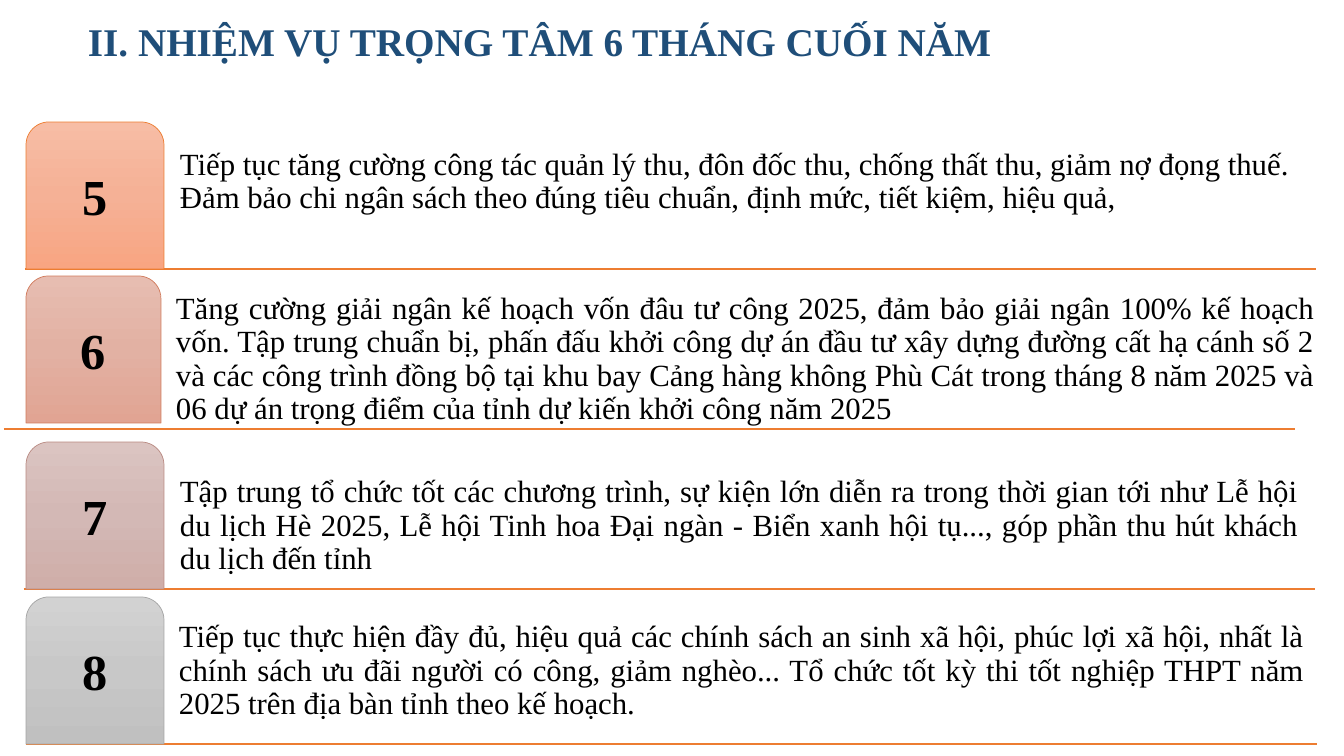
"""Build the slide of key tasks 5 to 8 for the last six months of the year."""
from copy import deepcopy

from pptx import Presentation
from pptx.dml.color import RGBColor
from pptx.enum.shapes import MSO_CONNECTOR, MSO_SHAPE
from pptx.enum.text import MSO_ANCHOR, MSO_AUTO_SIZE, PP_ALIGN
from pptx.oxml.ns import qn
from pptx.util import Pt

TITLE = "II. NHIỆM VỤ TRỌNG TÂM 6 THÁNG CUỐI NĂM"
NAVY = RGBColor(0x1F, 0x4E, 0x79)
BLACK = RGBColor(0x00, 0x00, 0x00)
ORANGE = RGBColor(0xED, 0x7D, 0x31)

TASKS = [
    {
        "number": "5",
        "wording": "Tiếp tục tăng cường công tác quản lý thu, đôn đốc thu, chống thất thu, "
                   "giảm nợ đọng thuế. Đảm bảo chi ngân sách theo đúng tiêu chuẩn, định mức, "
                   "tiết kiệm, hiệu quả,",
        "align": PP_ALIGN.LEFT,
        "wording_box": (175, 143, 1160, 77),
        "tab_top": 122, "tab_width": 138, "rule_start": (25, 269),
        "shades": (RGBColor(0xF7, 0xBD, 0xA5), RGBColor(0xF5, 0xB1, 0x96),
                   RGBColor(0xF8, 0xA5, 0x82)),
        "edge": ORANGE,
    },
    {
        "number": "6",
        "wording": "Tăng cường giải ngân kế hoạch vốn đâu tư công 2025, đảm bảo giải ngân 100% "
                   "kế hoạch vốn. Tập trung chuẩn bị, phấn đấu khởi công dự án đầu tư xây dựng "
                   "đường cất hạ cánh số 2 và các công trình đồng bộ tại khu bay Cảng hàng không "
                   "Phù Cát trong tháng 8 năm 2025 và 06 dự án trọng điểm của tỉnh dự kiến khởi "
                   "công năm 2025",
        "align": PP_ALIGN.JUSTIFY,
        "wording_box": (171, 274, 1148, 157),
        "tab_top": 276, "tab_width": 135, "rule_start": (4, 429),
        "shades": (RGBColor(0xE7, 0xBD, 0xB1), RGBColor(0xE2, 0xB1, 0xA3),
                   RGBColor(0xE1, 0xA4, 0x93)),
        "edge": RGBColor(0xD1, 0x7B, 0x5C),
    },
    {
        "number": "7",
        "wording": "Tập trung tổ chức tốt các chương trình, sự kiện lớn diễn ra trong thời gian "
                   "tới như Lễ hội du lịch Hè 2025, Lễ hội Tinh hoa Đại ngàn - Biển xanh hội "
                   "tụ..., góp phần thu hút khách du lịch đến tỉnh",
        "align": PP_ALIGN.JUSTIFY,
        "wording_box": (175, 459, 1128, 122),
        "tab_top": 442, "tab_width": 138, "rule_start": (24, 589),
        "shades": (RGBColor(0xDB, 0xC4, 0xC1), RGBColor(0xD3, 0xB8, 0xB5),
                   RGBColor(0xCF, 0xAE, 0xA9)),
        "edge": RGBColor(0xB9, 0x8A, 0x82),
    },
    {
        "number": "8",
        "wording": "Tiếp tục thực hiện đầy đủ, hiệu quả các chính sách an sinh xã hội, phúc lợi "
                   "xã hội, nhất là chính sách ưu đãi người có công, giảm nghèo... Tổ chức tốt "
                   "kỳ thi tốt nghiệp THPT năm 2025 trên địa bàn tỉnh theo kế hoạch.",
        "align": PP_ALIGN.JUSTIFY,
        "wording_box": (174, 579, 1135, 147),
        "tab_top": 597, "tab_width": 138, "rule_start": (26, 744),
        "shades": (RGBColor(0xD2, 0xD2, 0xD2), RGBColor(0xC8, 0xC8, 0xC8),
                   RGBColor(0xC0, 0xC0, 0xC0)),
        "edge": RGBColor(0xA5, 0xA5, 0xA5),
    },
]

SLIDE_SIZE = (1344, 756)
TITLE_BOX = (78, 12, 944, 57)
TAB_LEFT, TAB_HEIGHT, RULE_LENGTH = 26, 147, 1291
TITLE_FONT = {"name": "Times New Roman", "size": Pt(28), "bold": True}
NUMBER_FONT = {"name": "Times New Roman", "size": Pt(36), "bold": True}
WORDING_FONT = {"name": "Times New Roman", "size": Pt(22), "bold": False}


def px(*lengths):
    """Turn pixel lengths into EMU."""
    return [round(length * 914400 / 100.8) for length in lengths]


def set_all(target, values):
    """Set each named attribute of the target."""
    for name, value in values.items():
        setattr(target, name, value)


def write(holder, text, font, color, align, anchor, inset, spacing):
    """Put one formatted paragraph in a shape."""
    frame = holder.text_frame
    margin_x, margin_y = px(*inset)
    set_all(frame, {
        "text": text, "word_wrap": True, "auto_size": MSO_AUTO_SIZE.NONE,
        "vertical_anchor": anchor, "margin_left": margin_x, "margin_right": margin_x,
        "margin_top": margin_y, "margin_bottom": margin_y,
    })
    paragraph = frame.paragraphs[0]
    set_all(paragraph, {"alignment": align, "line_spacing": spacing})
    run = paragraph.runs[0]
    set_all(run.font, font)
    run.font.color.rgb = color


def add_rule(slide, x, y):
    """Draw the orange rule under a task."""
    rule = slide.shapes.add_connector(MSO_CONNECTOR.STRAIGHT, *px(x, y, x + RULE_LENGTH, y))
    rule.line.color.rgb = ORANGE
    rule.line.width = Pt(1)
    properties = rule._element.spPr
    properties.append(properties.makeelement(qn("a:effectLst"), {}))


def add_tab(slide, task):
    """Draw the shaded tab that carries the task number."""
    tab = slide.shapes.add_shape(
        MSO_SHAPE.ROUND_2_SAME_RECTANGLE,
        *px(TAB_LEFT, task["tab_top"], task["tab_width"], TAB_HEIGHT))
    tab.shadow.inherit = False
    tab.fill.gradient()
    tab.fill.gradient_angle = 270
    first_stop = tab._element.spPr.find(".//" + qn("a:gs"))
    first_stop.addnext(deepcopy(first_stop))
    for index, (stop, shade) in enumerate(zip(tab.fill.gradient_stops, task["shades"])):
        stop.position = index / 2
        stop.color.rgb = shade
    tab.line.color.rgb = task["edge"]
    tab.line.width = Pt(0.5)
    write(tab, task["number"], NUMBER_FONT, BLACK, PP_ALIGN.CENTER,
          MSO_ANCHOR.MIDDLE, (7, 7), 0.9)


def main():
    """Build and save the slide."""
    deck = Presentation()
    deck.slide_width, deck.slide_height = px(*SLIDE_SIZE)
    slide = deck.slides.add_slide(deck.slide_layouts[5])
    title = slide.shapes.title
    set_all(title, dict(zip(("left", "top", "width", "height"), px(*TITLE_BOX))))
    write(title, TITLE, TITLE_FONT, NAVY, PP_ALIGN.LEFT, MSO_ANCHOR.TOP, (10, 5), 1.0)
    for task in TASKS:
        add_rule(slide, *task["rule_start"])
        add_tab(slide, task)
        wording = slide.shapes.add_textbox(*px(*task["wording_box"]))
        write(wording, task["wording"], WORDING_FONT, BLACK, task["align"],
              MSO_ANCHOR.BOTTOM, (5, 5), 0.9)
    deck.save("out.pptx")


if __name__ == "__main__":
    main()
